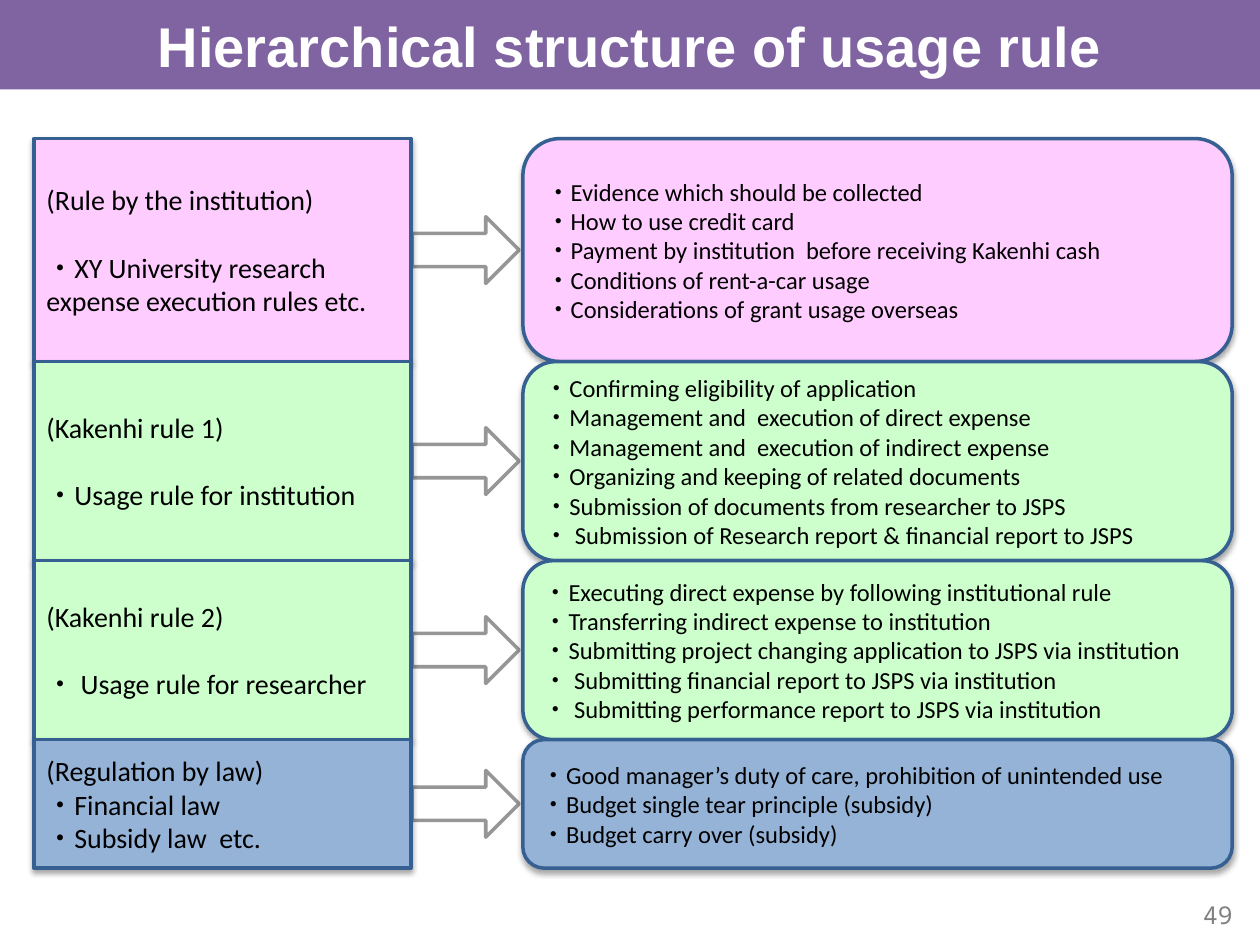
"""Build the slide on the hierarchical structure of usage rules."""
from pptx import Presentation
from pptx.dml.color import RGBColor
from pptx.enum.shapes import MSO_SHAPE
from pptx.enum.text import MSO_ANCHOR, MSO_AUTO_SIZE, PP_ALIGN
from pptx.util import Inches, Pt

RECTANGLE, ROUNDED = MSO_SHAPE.RECTANGLE, MSO_SHAPE.ROUNDED_RECTANGLE
ARROW = MSO_SHAPE.RIGHT_ARROW
MIDDLE, NO_FIT = MSO_ANCHOR.MIDDLE, MSO_AUTO_SIZE.NONE
LEFT, CENTER = PP_ALIGN.LEFT, PP_ALIGN.CENTER

TITLE = "Hierarchical structure of usage rule"
PAGE_NUMBER = "49"
LEVELS = [
    {"height": 1.77, "color": "FFCCFF", "heading_gap": 19.2,
     "rule": ["(Rule by the institution)",
              "・XY University research expense execution rules etc."],
     "details": ["・Evidence which should be collected",
                 "・How to use credit card",
                 "・Payment by institution  before receiving Kakenhi cash",
                 "・Conditions of rent-a-car usage",
                 "・Considerations of grant usage overseas"]},
    {"height": 1.58, "color": "CCFFCC", "heading_gap": 19.2,
     "rule": ["(Kakenhi rule 1)", "・Usage rule for institution"],
     "details": ["・Confirming eligibility of application",
                 "・Management and  execution of direct expense",
                 "・Management and  execution of indirect expense",
                 "・Organizing and keeping of related documents",
                 "・Submission of documents from researcher to JSPS",
                 "・ Submission of Research report & financial report to JSPS"]},
    {"height": 1.42, "color": "CCFFCC", "heading_gap": 19.2,
     "rule": ["(Kakenhi rule 2)", "・ Usage rule for researcher"],
     "details": ["・Executing direct expense by following institutional rule",
                 "・Transferring indirect expense to institution",
                 "・Submitting project changing application to JSPS via institution",
                 "・ Submitting financial report to JSPS via institution",
                 "・ Submitting performance report to JSPS via institution"]},
    {"height": 1.02, "color": "95B3D7", "heading_gap": 0,
     "rule": ["(Regulation by law)", "・Financial law", "・Subsidy law  etc."],
     "details": ["・Good manager’s duty of care, prohibition of unintended use",
                 "・Budget single tear principle (subsidy)",
                 "・Budget carry over (subsidy)"]},
]

SLIDE_WIDTH, SLIDE_HEIGHT, TITLE_HEIGHT = 10, 7.5, 0.71
LEVELS_TOP = 1.1
RULE_LEFT, RULE_WIDTH = 0.27, 2.99
ARROW_LEFT, ARROW_WIDTH, ARROW_HEIGHT = 3.27, 0.85, 0.53
DETAIL_LEFT, DETAIL_WIDTH = 4.15, 5.63

TITLE_FORMAT = {"name": "Arial", "size": Pt(32), "bold": True}
RULE_FORMAT = {"name": "Calibri", "size": Pt(16)}
DETAIL_FORMAT = {"name": "Calibri", "size": Pt(14)}
NUMBER_FORMAT = {"name": "Noto Sans Mono", "size": Pt(14)}


def paint(color_format, color):
    color_format.rgb = RGBColor.from_string(color)


def fill_shape(shape, color):
    shape.fill.solid()
    paint(shape.fill.fore_color, color)


def outline_shape(shape, color):
    paint(shape.line.color, color)
    shape.line.width = Pt(2)


def place(shape, left, top, width, height):
    box = {"left": left, "top": top, "width": width, "height": height}
    for name, value in box.items():
        setattr(shape, name, Inches(value))


def write(shape, lines, font_format, color="000000", alignment=LEFT, wrap=True):
    frame = shape.text_frame
    frame.text = "\n".join(lines)
    frame.auto_size, frame.word_wrap, frame.vertical_anchor = NO_FIT, wrap, MIDDLE
    for paragraph in frame.paragraphs:
        paragraph.alignment = alignment
        font = paragraph.runs[0].font
        for name, value in font_format.items():
            setattr(font, name, value)
        paint(font.color, color)


def add_box(slide, kind, box, color, lines, font_format):
    shape = slide.shapes.add_shape(kind, *map(Inches, box))
    fill_shape(shape, color)
    outline_shape(shape, "376092")
    write(shape, lines, font_format)
    return shape


def add_arrow(slide, middle):
    box = ARROW_LEFT, middle - ARROW_HEIGHT / 2, ARROW_WIDTH, ARROW_HEIGHT
    arrow = slide.shapes.add_shape(ARROW, *map(Inches, box))
    arrow.shadow.inherit = False
    arrow.fill.background()
    outline_shape(arrow, "969696")


def add_level(slide, level, top):
    height, color = level["height"], level["color"]
    add_arrow(slide, top + height / 2)
    rule = add_box(slide, RECTANGLE, (RULE_LEFT, top, RULE_WIDTH, height),
                   color, level["rule"], RULE_FORMAT)
    rule.text_frame.paragraphs[0].space_after = Pt(level["heading_gap"])
    add_box(slide, ROUNDED, (DETAIL_LEFT, top, DETAIL_WIDTH, height),
            color, level["details"], DETAIL_FORMAT)


def main():
    presentation = Presentation()
    presentation.slide_width = Inches(SLIDE_WIDTH)
    presentation.slide_height = Inches(SLIDE_HEIGHT)
    slide = presentation.slides.add_slide(presentation.slide_layouts[5])

    title = slide.shapes.title
    place(title, 0, 0, SLIDE_WIDTH, TITLE_HEIGHT)
    fill_shape(title, "8064A2")
    write(title, [TITLE], TITLE_FORMAT, "FFFFFF", CENTER, wrap=False)

    top = LEVELS_TOP
    for level in LEVELS:
        add_level(slide, level, top)
        top += level["height"]

    number = slide.shapes.add_textbox(*map(Inches, (9.45, 7.09, 0.56, 0.34)))
    write(number, [PAGE_NUMBER], NUMBER_FORMAT, "808080")
    presentation.save("out.pptx")


if __name__ == "__main__":
    main()
